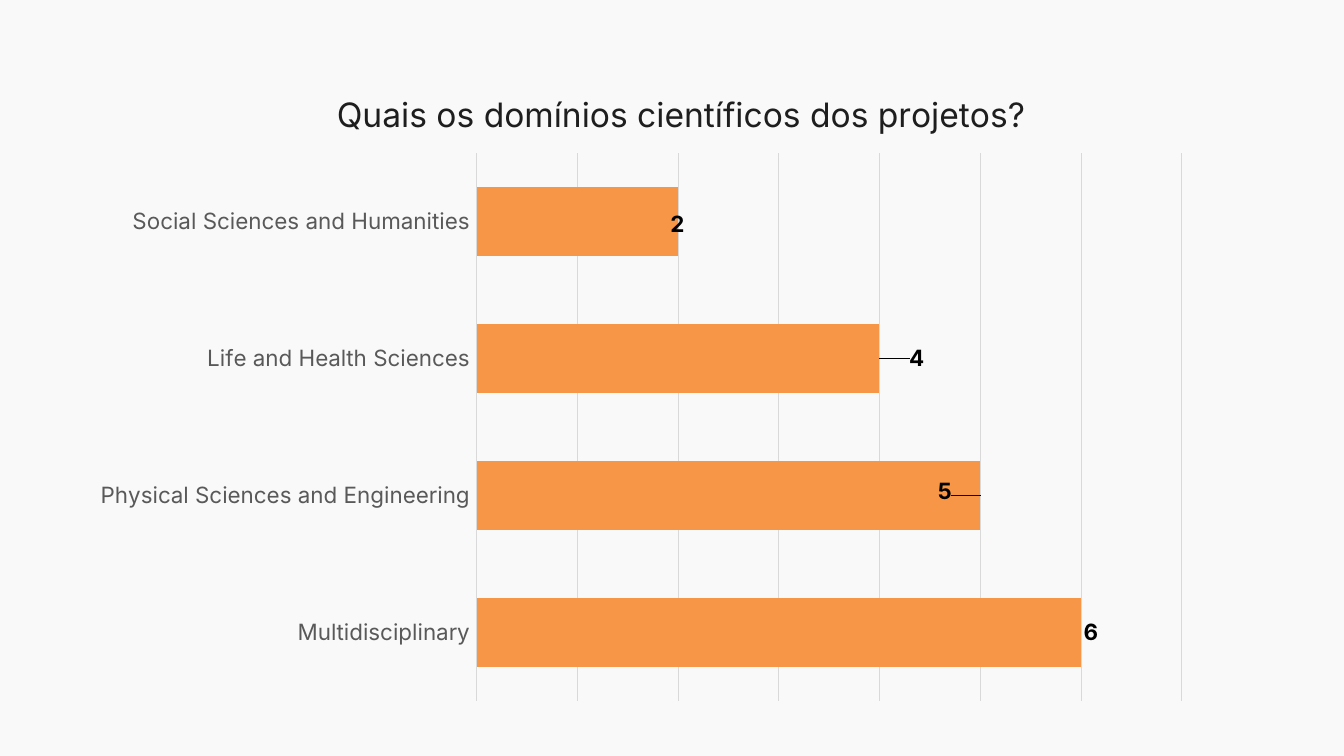
import lxml.etree
import pptx
import pptx.chart.data
import pptx.dml.color
import pptx.enum.chart
import pptx.oxml.ns
import pptx.util
from pptx.util import Inches

BACKGROUND = pptx.dml.color.RGBColor(0xF9, 0xF9, 0xF9)
ORANGE = pptx.dml.color.RGBColor(0xF7, 0x96, 0x46)
GRID = pptx.dml.color.RGBColor(0xD9, 0xD9, 0xD9)
GRAY = pptx.dml.color.RGBColor(0x59, 0x59, 0x59)
INK = pptx.dml.color.RGBColor(0x1E, 0x1E, 0x1E)
BLACK = pptx.dml.color.RGBColor(0, 0, 0)

# Category, value and label offset (fractions of the chart size), bottom to top
DOMAINS = [
    ("Multidisciplinary", 6, (0, 0)),
    ("Physical Sciences and Engineering", 5, (-0.04, -0.006)),
    ("Life\u00a0and Health Sciences", 4, (0.024, 0)),
    ("Social Sciences and Humanities", 2, (-0.009, 0.005)),
]


def style_font(font, size, color, name="Inter", bold=False):
    font.size = pptx.util.Pt(size)
    font.color.rgb = color
    font.name = name
    font.bold = bold


def place(element, index, **settings):
    """Give a chart element a manual layout, as its child number index."""
    for old in element.findall(pptx.oxml.ns.qn("c:layout")):
        element.remove(old)
    layout = lxml.etree.Element(pptx.oxml.ns.qn("c:layout"))
    manual = lxml.etree.SubElement(layout, pptx.oxml.ns.qn("c:manualLayout"))
    for key, value in settings.items():
        lxml.etree.SubElement(manual, pptx.oxml.ns.qn("c:" + key)).set("val", str(value))
    element.insert(index, layout)


# Slide
presentation = pptx.Presentation()
presentation.slide_width = Inches(20)
presentation.slide_height = Inches(11.25)
slide = presentation.slides.add_slide(presentation.slide_layouts[6])
slide.background.fill.solid()
slide.background.fill.fore_color.rgb = BACKGROUND

# Bar chart
chart_data = pptx.chart.data.CategoryChartData()
chart_data.categories = [name for name, value, offset in DOMAINS]
chart_data.add_series("Series 1", [value for name, value, offset in DOMAINS])
chart = slide.shapes.add_chart(
    pptx.enum.chart.XL_CHART_TYPE.BAR_CLUSTERED,
    Inches(1.17), Inches(1.12), Inches(16.75), Inches(9.5), chart_data,
).chart
style_font(chart.font, 12, BLACK, "Montserrat")
chart.has_legend = False

# Title
chart.has_title = True
paragraph = chart.chart_title.text_frame.paragraphs[0]
paragraph.text = "Quais os domínios científicos dos projetos?"
style_font(paragraph.font, 36, INK)
style_font(paragraph.runs[0].font, 36, INK)
chart.chart_title.include_in_layout = False
title = chart._chartSpace.find(".//" + pptx.oxml.ns.qn("c:title"))
place(title, 1, xMode="edge", yMode="edge", x=0.224, y=0.015)

# Axes and plot area
category_axis = chart.category_axis
category_axis.format.line.fill.background()
category_axis.major_tick_mark = pptx.enum.chart.XL_TICK_MARK.OUTSIDE
style_font(category_axis.tick_labels.font, 24, GRAY)
value_axis = chart.value_axis
value_axis.visible = False
value_axis.minimum_scale = 0
value_axis.maximum_scale = 7
value_axis.major_unit = 1
value_axis.has_major_gridlines = True
value_axis.major_gridlines.format.line.color.rgb = GRID
value_axis.major_gridlines.format.line.width = pptx.util.Pt(0.75)
plot_area = chart._chartSpace.find(".//" + pptx.oxml.ns.qn("c:plotArea"))
place(plot_area, 0, layoutTarget="inner", xMode="edge", yMode="edge",
      x=0.3535, y=0.122, w=0.6265, h=0.858)

# Bars
plot = chart.plots[0]
plot.gap_width = 100
plot.vary_by_categories = False
series = plot.series[0]
series.format.fill.solid()
series.format.fill.fore_color.rgb = ORANGE

# Value labels, some nudged away from the end of the bar
outside_end = pptx.enum.chart.XL_LABEL_POSITION.OUTSIDE_END
series.data_labels.show_value = True
series.data_labels.position = outside_end
style_font(series.data_labels.font, 24, BLACK, bold=True)
for index in range(len(DOMAINS)):
    label = series.points[index].data_label
    style_font(label.font, 24, BLACK, bold=True)
    label.position = outside_end
label_elements = series._element.findall(".//" + pptx.oxml.ns.qn("c:dLbl"))
for element, (name, value, (x, y)) in zip(label_elements, DOMAINS):
    place(element, 1, x=x, y=y)

presentation.save("out.pptx")
